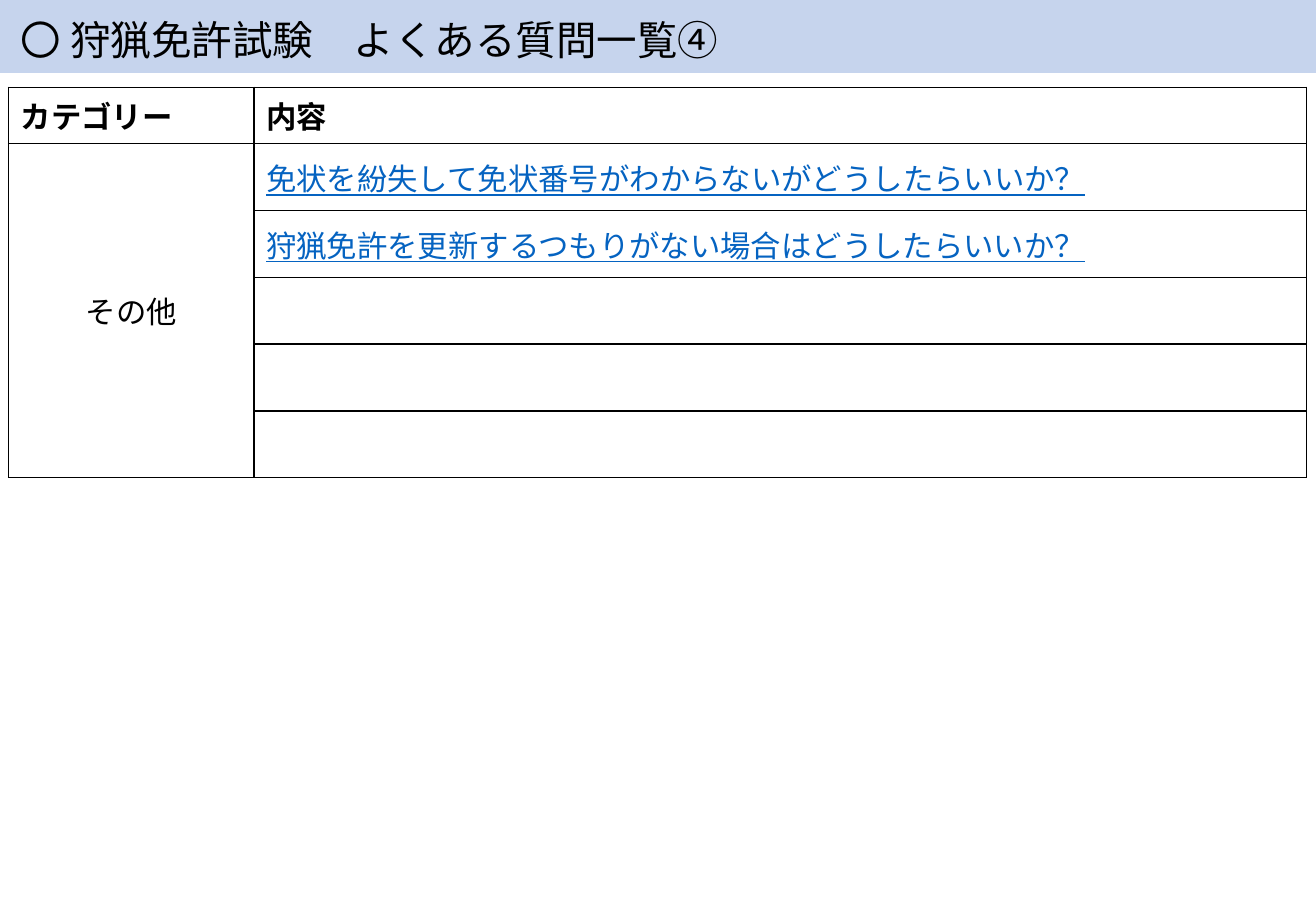
from lxml import etree
from pptx import Presentation
from pptx.dml.color import RGBColor
from pptx.enum import shapes, text
from pptx.oxml import ns
from pptx.util import Inches, Pt

# Content
TITLE = "〇 狩猟免許試験　よくある質問一覧④"
HEADERS = ("カテゴリー", "内容")
CATEGORY = "その他"
QUESTIONS = (
    "免状を紛失して免状番号がわからないがどうしたらいいか？",
    "狩猟免許を更新するつもりがない場合はどうしたらいいか？",
)
QUESTION_ROWS = 5

# Style
FONT = "Noto Sans CJK JP"
BLACK = RGBColor(0x00, 0x00, 0x00)
WHITE = RGBColor(0xFF, 0xFF, 0xFF)
BAND_BLUE = RGBColor(0x8F, 0xAA, 0xDC)
QUESTION_BLUE = RGBColor(0x05, 0x63, 0xC1)
SLIDE_WIDTH, SLIDE_HEIGHT = 10.83, 7.5
COLUMN_WIDTHS = (2.02, 8.66)
HEADER_HEIGHT, ROW_HEIGHT = 0.41, 0.55


def add_element(parent, tag, **attributes):
    return etree.SubElement(parent, ns.qn(tag), attributes)


def write(frame, words, size, color=BLACK, bold=False, underline=False,
          align=text.PP_ALIGN.LEFT):
    paragraph = frame.paragraphs[0]
    paragraph.text = words
    paragraph.alignment = align
    font = paragraph.font
    font.size, font.bold, font.underline = Pt(size), bold, underline
    font.color.rgb = color
    font.name = FONT
    add_element(font._element, "a:ea", typeface=FONT)


def format_cell(cell):
    cell.vertical_anchor = text.MSO_ANCHOR.MIDDLE
    properties = cell._tc.get_or_add_tcPr()
    for side in ("a:lnL", "a:lnR", "a:lnT", "a:lnB"):
        line = add_element(properties, side, w=str(Pt(1)))
        fill = add_element(line, "a:solidFill")
        add_element(fill, "a:srgbClr", val=str(BLACK))
    cell.fill.solid()
    cell.fill.fore_color.rgb = WHITE


presentation = Presentation()
presentation.slide_width = Inches(SLIDE_WIDTH)
presentation.slide_height = Inches(SLIDE_HEIGHT)
slide = presentation.slides.add_slide(presentation.slide_layouts[5])

# Question table
table_height = HEADER_HEIGHT + QUESTION_ROWS * ROW_HEIGHT
table = slide.shapes.add_table(
    QUESTION_ROWS + 1, len(HEADERS), Inches(0.07), Inches(0.72),
    Inches(sum(COLUMN_WIDTHS)), Inches(table_height)).table
table.first_row = table.horz_banding = False
for column, width in zip(table.columns, COLUMN_WIDTHS):
    column.width = Inches(width)
for index, row in enumerate(table.rows):
    row.height = Inches(ROW_HEIGHT if index else HEADER_HEIGHT)
for cell in table.iter_cells():
    format_cell(cell)

for column, header in enumerate(HEADERS):
    write(table.cell(0, column).text_frame, header, 18, bold=True)
table.cell(1, 0).merge(table.cell(QUESTION_ROWS, 0))
write(table.cell(1, 0).text_frame, CATEGORY, 18, align=text.PP_ALIGN.CENTER)
for row, question in enumerate(QUESTIONS, start=1):
    write(table.cell(row, 1).text_frame, question, 18, QUESTION_BLUE,
          underline=True)

# Half-transparent title band
band = slide.shapes.add_shape(shapes.MSO_SHAPE.RECTANGLE, 0, 0,
                              Inches(SLIDE_WIDTH), Inches(0.6))
band.shadow.inherit = False
band.fill.solid()
band.fill.fore_color.rgb = BAND_BLUE
band_color = band._element.spPr.find(".//" + ns.qn("a:srgbClr"))
add_element(band_color, "a:alpha", val="50000")
band.line.fill.background()

# Title, in front of the band
title = slide.shapes.title
title.left, title.top = Inches(0.07), Inches(0.07)
title.width, title.height = Inches(6.04), Inches(0.5)
frame = title.text_frame
frame.word_wrap = False
frame.auto_size = text.MSO_AUTO_SIZE.SHAPE_TO_FIT_TEXT
frame.vertical_anchor = text.MSO_ANCHOR.TOP
write(frame, TITLE, 24)
slide.shapes._spTree.append(title._element)

presentation.save("out.pptx")
